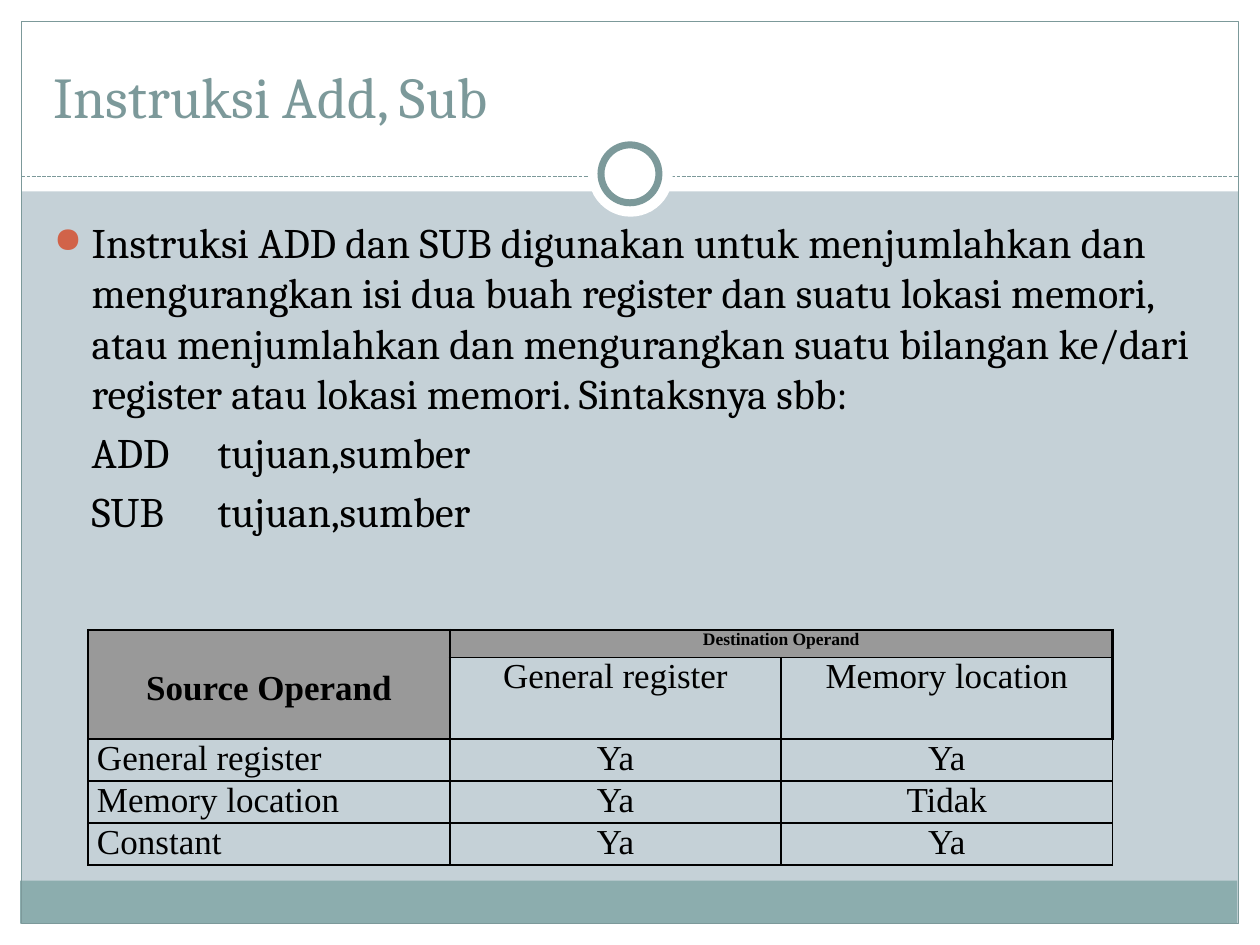
from pptx import Presentation
from pptx.dml.color import RGBColor
from pptx.enum.dml import MSO_LINE_DASH_STYLE as Dash
from pptx.enum.shapes import MSO_CONNECTOR as Connector, MSO_SHAPE as Shape
from pptx.enum.text import MSO_ANCHOR as Anchor, PP_ALIGN as Align
from pptx.oxml.ns import qn
from pptx.util import Inches, Pt
from lxml.etree import SubElement

WHITE = RGBColor(0xFF, 0xFF, 0xFF)
BLACK = RGBColor(0x00, 0x00, 0x00)
MIST = RGBColor(0xC5, 0xD1, 0xD7)
TEAL = RGBColor(0x8C, 0xAD, 0xAE)
SLATE = RGBColor(0x7C, 0x99, 0x9A)
RUST = RGBColor(0xD1, 0x63, 0x49)
GREY = RGBColor(0x99, 0x99, 0x99)

BODY = [
    "Instruksi ADD dan SUB digunakan untuk menjumlahkan dan mengurangkan isi dua "
    "buah register dan suatu lokasi memori, atau menjumlahkan dan mengurangkan "
    "suatu bilangan ke/dari register atau lokasi memori. Sintaksnya sbb:",
    "ADD\ttujuan,sumber",
    "SUB\ttujuan,sumber",
]
OPERANDS = [
    ["Source Operand", "Destination Operand", ""],
    ["", "General register", "Memory location"],
    ["General register", "Ya", "Ya"],
    ["Memory location", "Ya", "Tidak"],
    ["Constant", "Ya", "Ya"],
]
COLUMN_WIDTHS = [2.87, 2.63, 2.63]
ROW_HEIGHTS = [0.22, 0.62, 0.31, 0.31, 0.31]


class SlideBuilder:
    """Draw styled elements on the current slide."""

    heading_font = "Cambria"
    table_font = "Times New Roman"

    def __init__(self, page):
        self.page = page
        page.background.fill.solid()
        page.background.fill.fore_color.rgb = MIST

    def shape(self, kind, left, top, width, height, fill=None, line=None, weight=0.75):
        shape = self.page.shapes.add_shape(
            kind, Inches(left), Inches(top), Inches(width), Inches(height))
        shape.shadow.inherit = False
        for paint, color in ((shape.fill, fill), (shape.line.fill, line)):
            if color is None:
                paint.background()
            else:
                paint.solid()
                paint.fore_color.rgb = color
        if line is not None:
            shape.line.width = Pt(weight)

    def dashed_line(self, left, right, top):
        line = self.page.shapes.add_connector(
            Connector.STRAIGHT, Inches(left), Inches(top), Inches(right), Inches(top))
        line.line.color.rgb = SLATE
        line.line.width = Pt(0.75)
        line.line.dash_style = Dash.SQUARE_DOT
        SubElement(line._element.spPr, qn("a:effectLst"))

    def format_runs(self, para, font, size, color, bold=False):
        for span in para.runs:
            span.font.name = font
            span.font.size = Pt(size)
            span.font.color.rgb = color
            span.font.bold = bold

    def text(self, lines, left, top, width, height, size, color, anchor=Anchor.TOP):
        box = self.page.shapes.add_textbox(
            Inches(left), Inches(top), Inches(width), Inches(height))
        frame = box.text_frame
        frame.word_wrap = True
        frame.vertical_anchor = anchor
        frame.text = "\n".join(lines)
        for para in frame.paragraphs:
            self.format_runs(para, self.heading_font, size, color)
        return frame.paragraphs

    def indent(self, para, left, hanging=0):
        properties = para._p.get_or_add_pPr()
        properties.set("marL", str(Inches(left)))
        properties.set("indent", str(-Inches(hanging)))
        return properties

    def bullet(self, para, left):
        properties = self.indent(para, left, left)
        color = SubElement(properties, qn("a:buClr"))
        SubElement(color, qn("a:srgbClr"), val=str(RUST))
        SubElement(properties, qn("a:buSzPct"), val="85000")
        SubElement(properties, qn("a:buChar"), char="●")

    def border(self, cell, side, weight):
        line = SubElement(cell._tc.get_or_add_tcPr(), qn(f"a:ln{side}"), w=str(Pt(weight)))
        fill = SubElement(line, qn("a:solidFill"))
        SubElement(fill, qn("a:srgbClr"), val=str(BLACK))

    def cell(self, cell, text, row, column):
        heavy = {
            "L": column <= 1,
            "R": column == 0 or row == 0 or (row == 1 and column == 2),
            "T": row in (0, 2),
            "B": row == 1 or (column == 0 and row in (0, 4)),
        }
        for side, is_heavy in heavy.items():
            self.border(cell, side, 1.5 if is_heavy else 1)
        header = row == 0 or (row == 1 and column == 0)
        if header:
            cell.fill.solid()
            cell.fill.fore_color.rgb = GREY
        else:
            cell.fill.background()
        cell.margin_left = cell.margin_right = Inches(0.07)
        cell.margin_top = Inches(0.31 if (row, column) == (0, 0) else 0)
        cell.margin_bottom = 0
        if text:
            cell.text_frame.text = text
            para = cell.text_frame.paragraphs[0]
            para.alignment = Align.JUSTIFY if column == 0 and row > 1 else Align.CENTER
            size = 10 if (row, column) == (0, 1) else 20
            self.format_runs(para, self.table_font, size, BLACK, header)

    def table(self, rows, left, top):
        table = self.page.shapes.add_table(
            len(rows), len(rows[0]), Inches(left), Inches(top),
            Inches(sum(COLUMN_WIDTHS)), Inches(sum(ROW_HEIGHTS))).table
        table.first_row = table.horz_banding = False
        for column, width in zip(table.columns, COLUMN_WIDTHS):
            column.width = Inches(width)
        for row, height in zip(table.rows, ROW_HEIGHTS):
            row.height = Inches(height)
        table.cell(0, 0).merge(table.cell(1, 0))
        table.cell(0, 1).merge(table.cell(0, 2))
        for row, texts in enumerate(rows):
            for column, text in enumerate(texts):
                self.cell(table.cell(row, column), text, row, column)


def main():
    deck = Presentation()
    deck.slide_width, deck.slide_height = Inches(10), Inches(7.5)
    slide = SlideBuilder(deck.slides.add_slide(deck.slide_layouts[6]))

    for edge in ((0, 7.33, 10, 0.17), (0, 0, 10, 1.52),
                 (0, 0, 0.17, 7.5), (9.83, 0, 0.17, 7.5)):
        slide.shape(Shape.RECTANGLE, *edge, fill=WHITE)
    slide.shape(Shape.RECTANGLE, 0.16, 6.99, 9.66, 0.34, fill=TEAL)
    slide.shape(Shape.RECTANGLE, 0.17, 0.17, 9.66, 7.16, line=SLATE)
    slide.dashed_line(0.17, 9.83, 1.4)
    slide.shape(Shape.OVAL, 4.67, 1.05, 0.67, 0.67, fill=WHITE)
    slide.shape(Shape.OVAL, 4.77, 1.15, 0.46, 0.46, fill=WHITE, line=SLATE, weight=4)

    slide.text(["Instruksi Add, Sub"], 0.33, 0.25, 9.33, 0.83, 33, SLATE, Anchor.BOTTOM)
    intro, *syntax = slide.text(BODY, 0.33, 1.67, 9.3, 5, 24, BLACK)
    slide.bullet(intro, 0.3)
    for para in syntax:
        slide.indent(para, 0.3)
        para.space_before = Pt(4.8)
    slide.table(OPERANDS, 0.7, 5)

    deck.save("out.pptx")


if __name__ == "__main__":
    main()
